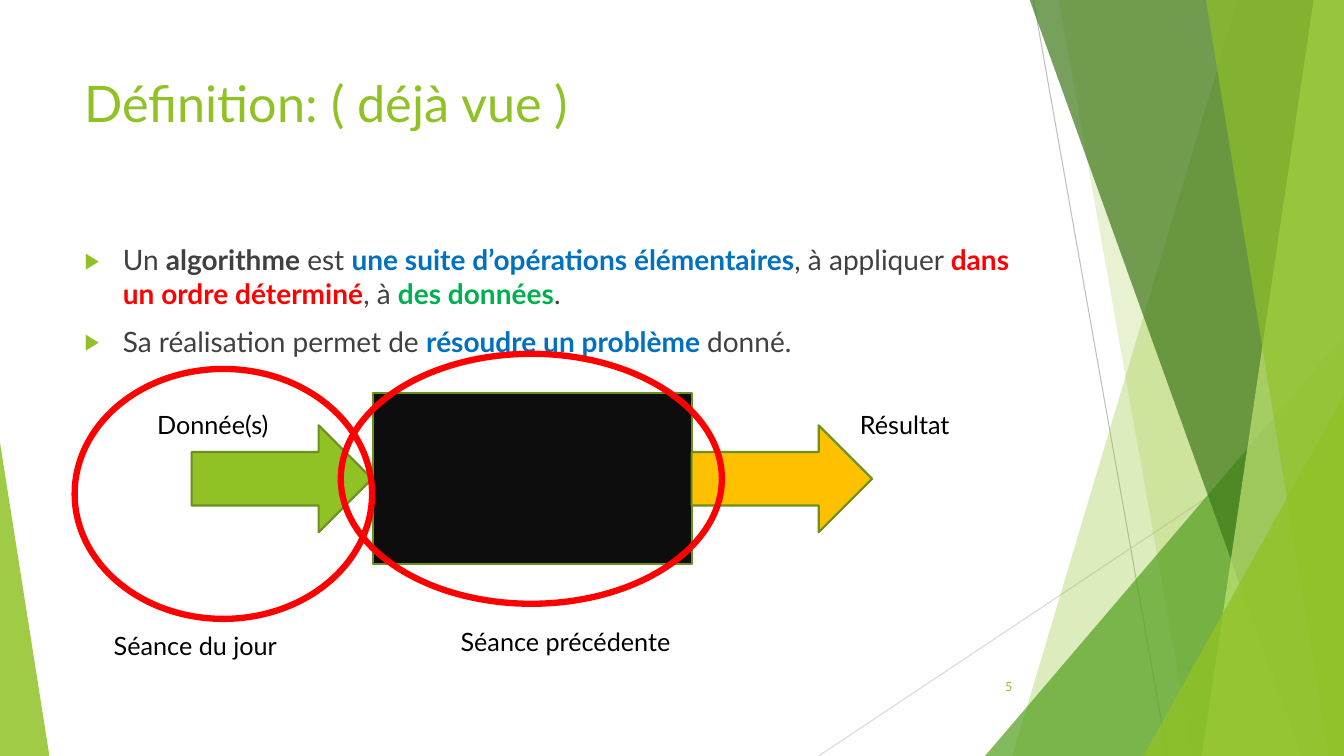
from lxml.etree import SubElement
from pptx import Presentation
from pptx.dml.color import RGBColor
from pptx.enum.shapes import MSO_CONNECTOR, MSO_SHAPE as Shape
from pptx.enum.text import MSO_ANCHOR as Anchor, MSO_AUTO_SIZE as AutoSize, PP_ALIGN as Align
from pptx.oxml.ns import qn
from pptx.util import Pt

PX = 9144
WIDTH, HEIGHT = 1333, 750
FONT = "Lato"
LIME, OLIVE, BLACK, GREY = "90C226", "6B901C", "000000", "404040"
BLUE, RED, GREEN = "0070C0", "FF0000", "00B050"

RAYS = [((1025, 0), (1158, 750), "BFBFBF"), ((1333, 403), (812, 750), "D9D9D9")]
FACETS = [
    ("band", (1228, 1004), LIME, 30),
    ("band", (1050, 1183), LIME, 20),
    ("triangle", (977, 333, 356, 417, 1), "54A021", 72),
    ("band", (1021, 1291), "3F7819", 70),
    ("band", (1303, 1192), "C0E474", 70),
    ("band", (1196, 1318), LIME, 65),
    ("triangle", (1134, 393, 199, 357, 1), LIME, 80),
    ("triangle", (0, 439, 49, 311, 0), LIME, 85),
]

TITLE = "Définition: ( déjà vue )"
BULLETS = [
    [("Un ", GREY, False), ("algorithme", GREY, True), (" est ", GREY, False),
     ("une suite d’opérations élémentaires", BLUE, True), (", à appliquer ", GREY, False),
     ("dans un ordre déterminé", RED, True), (", à ", GREY, False),
     ("des données", GREEN, True), (".", GREY, False)],
    [("Sa réalisation permet de ", GREY, False), ("résoudre un problème ", BLUE, True),
     ("donné.", GREY, False)],
]
DIAGRAM = [
    (Shape.RECTANGLE, (370, 390, 316, 170), "0D0D0D", OLIVE, 1.5),
    (Shape.RIGHT_ARROW, (190, 422, 179, 106), LIME, OLIVE, 1.5),
    (Shape.RIGHT_ARROW, (686, 422, 179, 106), "FFC000", OLIVE, 1.5),
    (Shape.OVAL, (74, 366, 295, 248), None, RED, 4.5),
    (Shape.OVAL, (338, 351, 378, 248), None, RED, 4.5),
]
LABELS = [
    ("Donnée(s)", (146, 401, 224, 40)),
    ("Résultat", (843, 401, 224, 40)),
    ("Séance précédente", (447, 616, 270, 40)),
    ("Séance du jour", (103, 620, 270, 40)),
]

deck = Presentation()
deck.slide_width, deck.slide_height = WIDTH * PX, HEIGHT * PX
page = deck.slides.add_slide(deck.slide_layouts[6])


def emu(lengths):
    return [length * PX for length in lengths]


def rgb(color):
    return RGBColor.from_string(color)


def paint(shape, fill=None, line=None, weight=1, alpha=100):
    shape.shadow.inherit = False
    if fill:
        shape.fill.solid()
        shape.fill.fore_color.rgb = rgb(fill)
        if alpha < 100:
            tint = shape.fill._xPr.find(qn("a:solidFill"))[0]
            SubElement(tint, qn("a:alpha"), val=str(alpha * 1000))
    else:
        shape.fill.background()
    if line:
        shape.line.color.rgb = rgb(line)
        shape.line.width = Pt(weight)
    else:
        shape.line.fill.background()


def add_bullet(para):
    props = para._p.get_or_add_pPr()
    props.set("marL", str(38 * PX))
    props.set("indent", str(-38 * PX))
    SubElement(SubElement(props, qn("a:buClr")), qn("a:srgbClr"), val=LIME)
    SubElement(props, qn("a:buSzPct"), val="80000")
    SubElement(props, qn("a:buFont"), typeface=FONT)
    SubElement(props, qn("a:buChar"), char="▶")


def add_text(text, place, size=18, color=BLACK, align=Align.LEFT,
             anchor=Anchor.TOP, bullets=False, grow=False):
    frame = page.shapes.add_textbox(*emu(place)).text_frame
    frame.word_wrap = True
    frame.vertical_anchor = anchor
    frame.auto_size = AutoSize.SHAPE_TO_FIT_TEXT if grow else AutoSize.NONE
    paragraphs = [[(text, color, False)]] if isinstance(text, str) else text
    for number, spans in enumerate(paragraphs):
        para = frame.add_paragraph() if number else frame.paragraphs[0]
        para.alignment = align
        if bullets:
            para.space_before = Pt(10)
            add_bullet(para)
        for words, tone, bold in spans:
            span = para.add_run()
            span.text = words
            span.font.name, span.font.size, span.font.bold = FONT, Pt(size), bold
            span.font.color.rgb = rgb(tone)


for start, end, color in RAYS:
    ray = page.shapes.add_connector(MSO_CONNECTOR.STRAIGHT, *emu(start + end))
    ray.line.color.rgb = rgb(color)
    ray.line.width = Pt(0.75)
    SubElement(ray._element.spPr, qn("a:effectLst"))

for kind, geometry, color, alpha in FACETS:
    if kind == "band":
        top, bottom = geometry
        outline = page.shapes.build_freeform(top, -1, scale=PX)
        outline.add_line_segments([(WIDTH, -1), (WIDTH, HEIGHT), (bottom, HEIGHT)], close=True)
        facet = outline.convert_to_shape()
    else:
        *place, apex = geometry
        facet = page.shapes.add_shape(Shape.ISOSCELES_TRIANGLE, *emu(place))
        facet.adjustments[0] = apex
    paint(facet, color, alpha=alpha)

add_text(TITLE, (74, 67, 940, 144), size=36, color=LIME)
add_text(BULLETS, (74, 236, 940, 424), size=20, bullets=True)
add_text("5", (939, 661, 75, 40), size=9, color=LIME, align=Align.RIGHT, anchor=Anchor.MIDDLE)

for preset, place, fill, line, weight in DIAGRAM:
    paint(page.shapes.add_shape(preset, *emu(place)), fill, line, weight)

for words, place in LABELS:
    add_text(words, place, grow=True)

deck.save("out.pptx")
